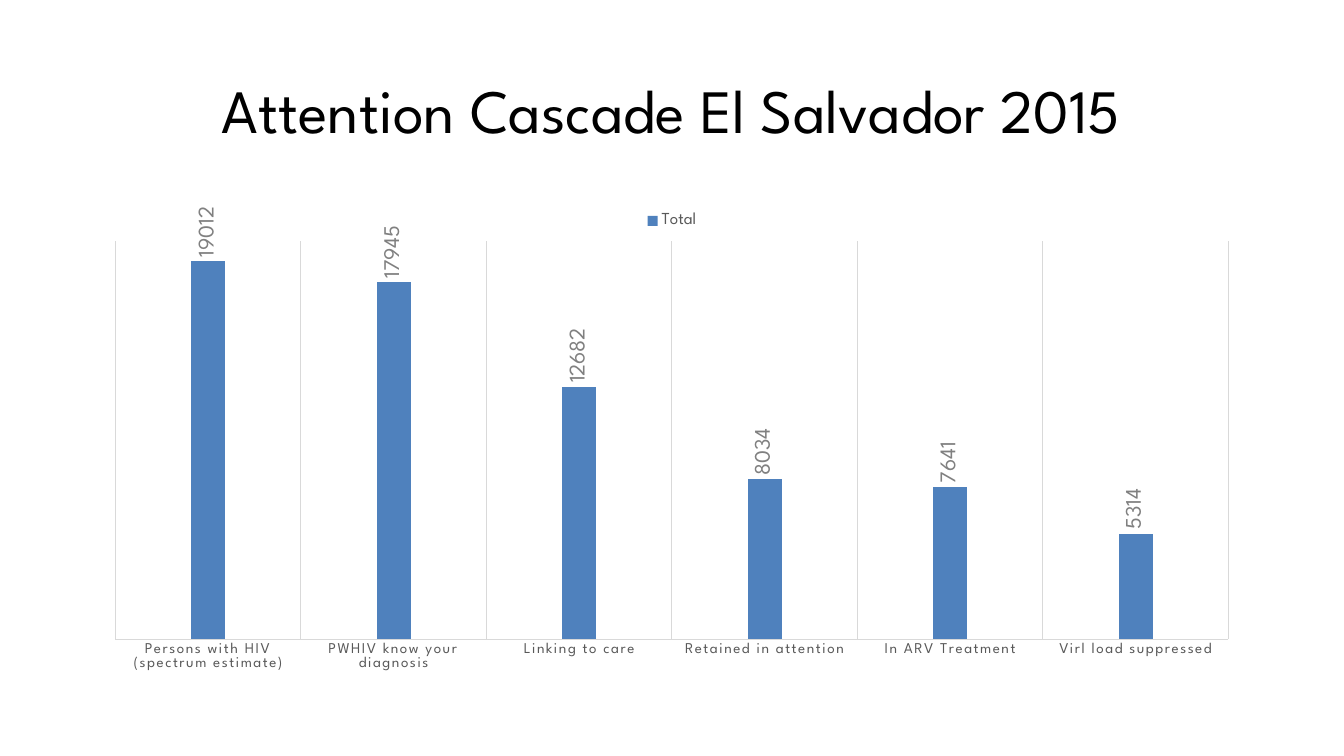
from lxml import etree
from pptx import Presentation
from pptx import util as u
from pptx.chart.data import CategoryChartData
from pptx.dml.color import RGBColor
from pptx.enum import chart as ch, text
from pptx.oxml.ns import qn

PX = 9525
CASCADE = {
    "Persons with HIV (spectrum estimate)": 19012,
    "PWHIV know your diagnosis": 17945,
    "Linking to care": 12682,
    "Retained in attention": 8034,
    "In ARV Treatment": 7641,
    "Virl load suppressed": 5314,
}


def rgb(value):
    return RGBColor.from_string(value)


def assign(obj, values):
    for name, value in values.items():
        setattr(obj, name, value)


class Deck:
    font = "League Spartan"
    black, dark, gray, pale, blue = "000000", "595959", "808080", "D9D9D9", "4F81BD"

    def __init__(self, width, height):
        self.prs = Presentation()
        assign(self.prs, {"slide_width": width * PX, "slide_height": height * PX})
        self.s = self.prs.slides.add_slide(self.prs.slide_layouts[5])

    def style(self, font, size, color):
        assign(font, {"name": self.font, "size": u.Pt(size), "bold": False})
        font.color.rgb = rgb(color)

    def line(self, fmt):
        fmt.line.color.rgb = rgb(self.pale)
        fmt.line.width = u.Pt(0.75)

    def title(self, words, x, y, w, h):
        sp = self.s.shapes.title
        assign(sp, {"left": x * PX, "top": y * PX, "width": w * PX, "height": h * PX})
        tf = sp.text_frame
        assign(tf, {"word_wrap": True, "vertical_anchor": text.MSO_ANCHOR.MIDDLE,
                    "auto_size": text.MSO_AUTO_SIZE.NONE})
        p = tf.paragraphs[0]
        assign(p, {"alignment": text.PP_ALIGN.CENTER, "line_spacing": 0.9})
        r = p.add_run()
        r.text = words
        self.style(r.font, 44, self.black)

    def columns(self, name, values, x, y, w, h):
        data = CategoryChartData()
        data.categories = list(values)
        data.add_series(name, list(values.values()))
        frame = self.s.shapes.add_chart(ch.XL_CHART_TYPE.COLUMN_CLUSTERED,
                                        x * PX, y * PX, w * PX, h * PX, data)
        chart = frame.chart
        assign(chart, {"has_title": False, "has_legend": True})
        self.style(chart.font, 10, self.black)
        assign(chart.legend, {"position": ch.XL_LEGEND_POSITION.TOP,
                              "include_in_layout": False})
        self.style(chart.legend.font, 12, self.dark)
        assign(chart.value_axis, {"visible": False, "has_major_gridlines": False,
                                  "minimum_scale": 0, "maximum_scale": 20000})
        axis = chart.category_axis
        assign(axis, {"has_major_gridlines": True,
                      "major_tick_mark": ch.XL_TICK_MARK.NONE})
        self.line(axis.format)
        self.line(axis.major_gridlines.format)
        self.style(axis.tick_labels.font, 10.64, self.dark)
        axis._element.xpath(".//a:defRPr")[0].attrib.update(
            {"kern": "1200", "spc": "120"})
        plot = chart.plots[0]
        assign(plot, {"gap_width": 444, "overlap": -90, "vary_by_categories": False})
        series = plot.series[0]
        series.format.fill.solid()
        series.format.fill.fore_color.rgb = rgb(self.blue)
        labels = series.data_labels
        assign(labels, {"show_value": True,
                        "position": ch.XL_LABEL_POSITION.OUTSIDE_END})
        self.style(labels.font, 16, self.gray)
        labels._element.xpath(".//a:bodyPr")[0].attrib.update(
            {"rot": "-5400000", "vert": "horz"})
        self.place_plot(chart, {"x": 22 / w, "y": 38 / h, "w": 1060 / w, "h": 379 / h})

    def place_plot(self, chart, box):
        area = chart._chartSpace.xpath("c:chart/c:plotArea")[0]
        for old in area.findall(qn("c:layout")):
            area.remove(old)
        layout = etree.Element(qn("c:layout"))
        area.insert(0, layout)
        manual = etree.SubElement(layout, qn("c:manualLayout"))
        settings = {"layoutTarget": "inner", "xMode": "edge", "yMode": "edge", **box}
        for tag, value in settings.items():
            etree.SubElement(manual, qn("c:" + tag)).set("val", str(value))


def main():
    deck = Deck(1280, 720)
    deck.title("Attention Cascade El Salvador 2015", 88, 38, 1104, 140)
    deck.columns("Total", CASCADE, 88, 192, 1104, 457)
    deck.prs.save("out.pptx")


if __name__ == "__main__":
    main()
